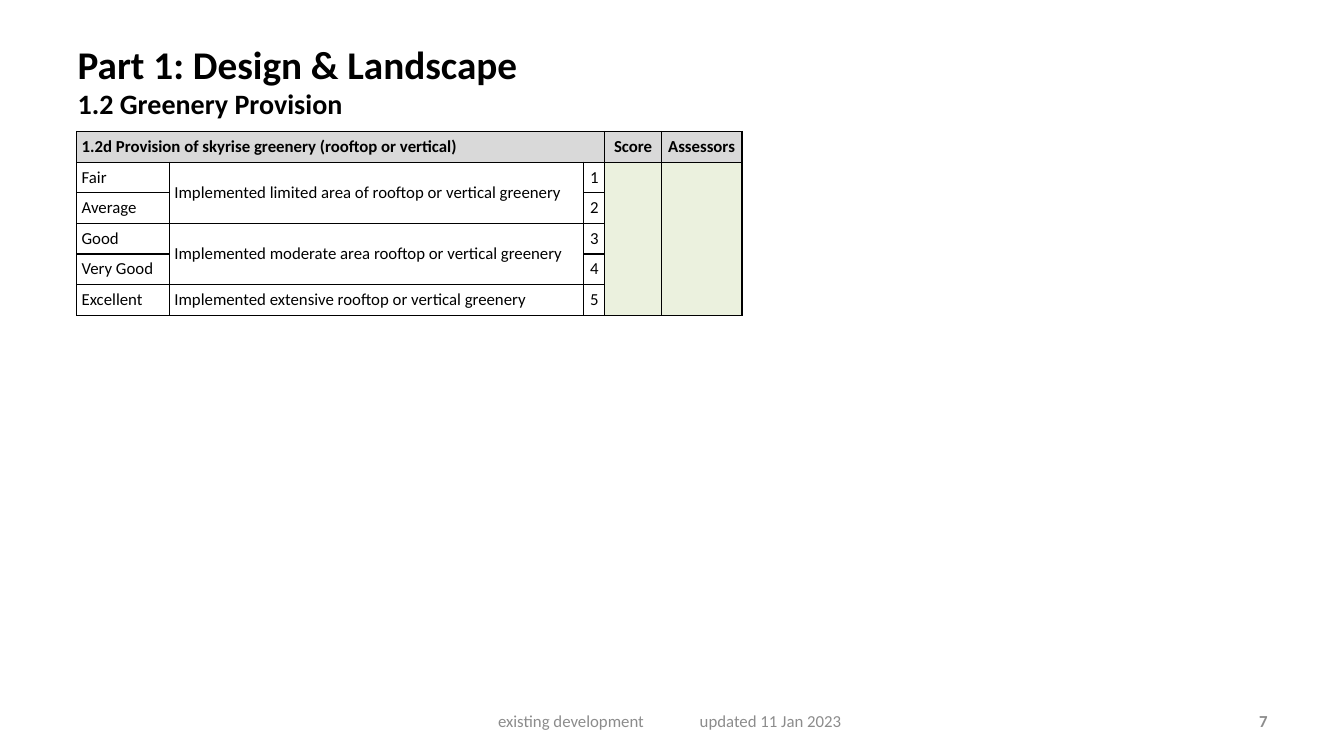
from dataclasses import dataclass

from lxml import etree
from pptx import Presentation
from pptx.dml.color import RGBColor
from pptx.enum.text import MSO_ANCHOR, PP_ALIGN
from pptx.oxml.ns import qn
from pptx.util import Inches, Pt

LEFT, CENTER, RIGHT = PP_ALIGN.LEFT, PP_ALIGN.CENTER, PP_ALIGN.RIGHT
MIDDLE = MSO_ANCHOR.MIDDLE
FONT = "Calibri"
COLORS = {"ink": "000000", "footer": "8C8C8C", "header": "D9D9D9",
          "entry": "EBF1DE", "paper": "FFFFFF"}
PAGE_WIDTH, PAGE_HEIGHT = Inches(13.33), Inches(7.5)
TITLE_ONLY = 5


@dataclass(frozen=True)
class Area:
    """Lengths in percent of the slide's width and height."""
    left: float
    top: float
    width: float
    height: float


@dataclass(frozen=True)
class Rating:
    grade: str
    points: int


@dataclass(frozen=True)
class Criterion:
    description: str
    ratings: tuple[Rating, ...]


TITLE_AREA = Area(5.03, 4, 77.72, 13.2)
TABLE_AREA = Area(5.7, 17.4, 49.51, 24.3)
FOOTER_AREA = Area(34.21, 92.67, 31.66, 5.33)
NUMBER_AREA = Area(71.72, 92.67, 23.33, 5.33)
COLUMN_SHARES = (6.9, 30.83, 1.58, 4.2, 6)
GRADE, DESCRIPTION, POINTS, SCORE, ASSESSORS = range(5)

CRITERIA = (
    Criterion("Implemented limited area of rooftop or vertical greenery",
              (Rating("Fair", 1), Rating("Average", 2))),
    Criterion("Implemented moderate area rooftop or vertical greenery",
              (Rating("Good", 3), Rating("Very Good", 4))),
    Criterion("Implemented extensive rooftop or vertical greenery",
              (Rating("Excellent", 5),)),
)


def across(percent: float) -> int:
    return round(PAGE_WIDTH * percent / 100)


def down(percent: float) -> int:
    return round(PAGE_HEIGHT * percent / 100)


def bounds(area: Area) -> tuple[int, int, int, int]:
    return across(area.left), down(area.top), across(area.width), down(area.height)


def write(para, text: str, *, size: float = 12, bold: bool = False,
          color: str = "ink", align=LEFT) -> None:
    para.alignment = align
    span = para.add_run()
    span.text = text
    span.font.name = FONT
    span.font.size = Pt(size)
    span.font.bold = bold
    span.font.color.rgb = RGBColor.from_string(COLORS[color])


def add_box(page, area: Area):
    frame = page.shapes.add_textbox(*bounds(area)).text_frame
    frame.word_wrap = True
    frame.vertical_anchor = MIDDLE
    return frame


def add_title(page) -> None:
    title = page.shapes.title
    title.left, title.top, title.width, title.height = bounds(TITLE_AREA)
    frame = title.text_frame
    frame.vertical_anchor = MIDDLE
    write(frame.paragraphs[0], "Part 1: Design & Landscape", size=28, bold=True)
    write(frame.add_paragraph(), "1.2 Greenery Provision", size=20, bold=True)


def style_cell(cell, fill: str) -> None:
    cell.vertical_anchor = MIDDLE
    cell.margin_left = cell.margin_right = Inches(0.05)
    cell.margin_top = cell.margin_bottom = Inches(0.05)
    properties = cell._tc.get_or_add_tcPr()
    for side in ("a:lnL", "a:lnR", "a:lnT", "a:lnB"):
        line = etree.SubElement(properties, qn(side), w=str(Pt(1)))
        paint = etree.SubElement(line, qn("a:solidFill"))
        etree.SubElement(paint, qn("a:srgbClr"), val=COLORS["ink"])
    cell.fill.solid()
    cell.fill.fore_color.rgb = RGBColor.from_string(COLORS[fill])


def add_score_table(page) -> None:
    row_count = 1 + sum(len(criterion.ratings) for criterion in CRITERIA)
    table = page.shapes.add_table(row_count, len(COLUMN_SHARES),
                                  *bounds(TABLE_AREA)).table
    table.horz_banding = False
    for column, share in zip(table.columns, COLUMN_SHARES):
        column.width = across(share)
    for row_index in range(row_count):
        for column_index in range(len(COLUMN_SHARES)):
            fill = "header" if row_index == 0 else (
                "entry" if column_index >= SCORE else "paper")
            style_cell(table.cell(row_index, column_index), fill)

    def fill_in(row: int, column: int, text: str, **style) -> None:
        write(table.cell(row, column).text_frame.paragraphs[0], text, **style)

    # Header row
    table.cell(0, GRADE).merge(table.cell(0, POINTS))
    fill_in(0, GRADE, "1.2d Provision of skyrise greenery (rooftop or vertical)", bold=True)
    for column, heading in ((SCORE, "Score"), (ASSESSORS, "Assessors")):
        fill_in(0, column, heading, bold=True, align=CENTER)
        table.cell(1, column).merge(table.cell(row_count - 1, column))

    # Ratings, grouped under a shared description
    row = 1
    for criterion in CRITERIA:
        last = row + len(criterion.ratings) - 1
        if last > row:
            table.cell(row, DESCRIPTION).merge(table.cell(last, DESCRIPTION))
        fill_in(row, DESCRIPTION, criterion.description)
        for rating in criterion.ratings:
            fill_in(row, GRADE, rating.grade)
            fill_in(row, POINTS, str(rating.points), align=CENTER)
            row += 1


def add_footer(page) -> None:
    frame = add_box(page, FOOTER_AREA)
    frame.margin_left = Inches(0.38)
    para = frame.paragraphs[0]
    stops = etree.SubElement(para._p.get_or_add_pPr(), qn("a:tabLst"))
    etree.SubElement(stops, qn("a:tab"), pos=str(Inches(2)), algn="l")
    write(para, "existing development\tupdated 11 Jan 2023", color="footer")
    number = add_box(page, NUMBER_AREA).paragraphs[0]
    write(number, "7", bold=True, color="footer", align=RIGHT)


def main() -> None:
    deck = Presentation()
    deck.slide_width, deck.slide_height = PAGE_WIDTH, PAGE_HEIGHT
    page = deck.slides.add_slide(deck.slide_layouts[TITLE_ONLY])
    add_title(page)
    add_score_table(page)
    add_footer(page)
    deck.save("out.pptx")


if __name__ == "__main__":
    main()
